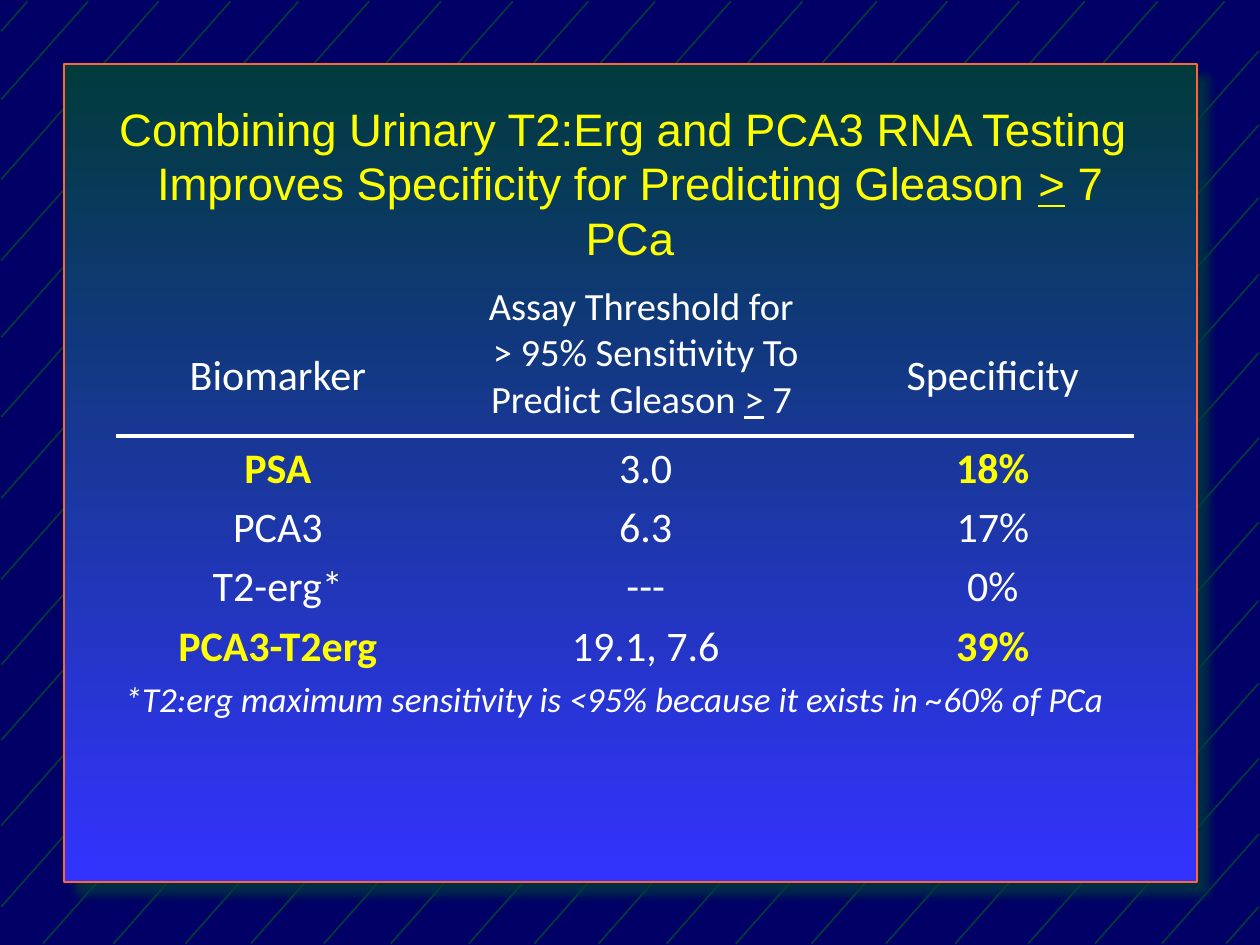
"""Build a slide comparing the specificity of urinary biomarkers."""
from dataclasses import dataclass

from lxml.etree import SubElement
from pptx import Presentation
from pptx.dml.color import RGBColor
from pptx.enum.shapes import MSO_CONNECTOR, MSO_SHAPE
from pptx.enum.text import MSO_ANCHOR, MSO_AUTO_SIZE, PP_ALIGN
from pptx.oxml import parse_xml
from pptx.oxml.ns import nsdecls, qn
from pptx.util import Inches, Pt


@dataclass(frozen=True)
class Theme:
    background: str = "000066"
    teal: str = "003B3B"
    blue: str = "3333FF"
    orange: str = "FF6633"
    text: str = "FFFFFF"
    accent: str = "FFFF00"
    heading_font: str = "Arial"
    body_font: str = "Calibri"
    title_size: int = 26
    body_size: int = 24
    threshold_size: int = 22
    note_size: int = 20


THEME = Theme()
TITLE = [
    "Combining Urinary T2:Erg and PCA3 RNA Testing ",
    "\v",
    "Improves Specificity for Predicting Gleason ",
    ">",
    " 7 PCa",
]
HEADERS = ["Biomarker", "Specificity"]
THRESHOLD = [
    ["Assay Threshold for "],
    ["> 95% Sensitivity To Predict Gleason ", ">", " 7 "],
]
ROWS = [
    ("PSA", "3.0", "18%"),
    ("PCA3", "6.3", "17%"),
    ("T2-erg*", "---", "0%"),
    ("PCA3-T2erg", "19.1, 7.6", "39%"),
]
HIGHLIGHTED = {"PSA", "PCA3-T2erg"}
NOTE = "*T2:erg maximum sensitivity is <95% because it exists in ~60% of PCa"
COLUMN_WIDTHS = [2.57, 3.27, 2.24]
ROW_HEIGHTS = [1.21, 0.47, 0.47, 0.47, 0.47, 0.49]
STRIPE_STARTS = [
    0.22, 0.7, 1.26, 1.83, 2.37, 2.93, 3.5, 4.07, 4.67, 5.2,
    5.8, 6.37, 6.96, 7.52, 8.09, 8.61, 9.19, 9.72, 10.34, 10.86,
    11.37, 11.91, 12.46, 13.06, 13.65, 14.2, 14.78, 15.31, 15.84, 16.35,
]
STRIPE_SLOPE = 1.13
EDGE, RIGHT, BOTTOM = 0.01, 9.99, 7.49
NO_STYLE = "{2D5ABB26-0587-4C30-8999-92F81FD0307C}"


def color(value):
    return RGBColor.from_string(value)


def add_run(paragraph, text, size, fill, font, bold=False, italic=False):
    run = paragraph.add_run()
    run.text = text
    run.font.size, run.font.name = Pt(size), font
    run.font.bold, run.font.italic = bold, italic
    run.font.underline = text == ">"
    run.font.color.rgb = color(fill)


def add_effects(shape, content=""):
    effects = f'<a:effectLst {nsdecls("a")}>{content}</a:effectLst>'
    shape._element.spPr.append(parse_xml(effects))


def add_stripes(slide):
    for start in STRIPE_STARTS:
        left_x = max(EDGE, start - (BOTTOM - EDGE) / STRIPE_SLOPE)
        right_x = min(start, RIGHT)
        left_y, right_y = (EDGE + (start - x) * STRIPE_SLOPE for x in (left_x, right_x))
        points = [Inches(value) for value in (right_x, right_y, left_x, left_y)]
        stripe = slide.shapes.add_connector(MSO_CONNECTOR.STRAIGHT, *points)
        stripe.line.color.rgb = color(THEME.teal)
        stripe.line.width = Pt(1)
        add_effects(stripe)


def add_panel(slide):
    panel = slide.shapes.add_shape(
        MSO_SHAPE.RECTANGLE, Inches(0.51), Inches(0.51), Inches(8.99), Inches(6.49)
    )
    panel.fill.gradient()
    panel.fill.gradient_angle = 270
    for stop, position, value in zip(
        panel.fill.gradient_stops, (0, 1), (THEME.teal, THEME.blue)
    ):
        stop.position = position
        stop.color.rgb = color(value)
    panel.line.color.rgb = color(THEME.orange)
    panel.line.width = Pt(1)
    add_effects(
        panel,
        f'<a:outerShdw blurRad="{Pt(5)}" dist="{Pt(9.9)}" dir="2700000">'
        f'<a:srgbClr val="{THEME.teal}"><a:alpha val="75000"/></a:srgbClr></a:outerShdw>',
    )


def set_title(slide):
    title = slide.shapes.title
    title.left, title.top = Inches(0.75), Inches(0.75)
    title.width, title.height = Inches(8.5), Inches(1.08)
    frame = title.text_frame
    frame.word_wrap, frame.auto_size = True, MSO_AUTO_SIZE.NONE
    frame.vertical_anchor = MSO_ANCHOR.TOP
    paragraph = frame.paragraphs[0]
    paragraph.alignment = PP_ALIGN.CENTER
    for text in TITLE:
        if text == "\v":
            line_break = paragraph._p.add_br()
            SubElement(line_break, qn("a:rPr"), sz=str(THEME.title_size * 100))
        else:
            add_run(paragraph, text, THEME.title_size, THEME.accent, THEME.heading_font)
    slide.shapes._spTree.append(title._element)


def write_cell(cell, text, size=THEME.body_size, align=PP_ALIGN.CENTER, **style):
    paragraph = cell.text_frame.paragraphs[0]
    paragraph.alignment, paragraph.line_spacing = align, 1.15
    highlighted = style.pop("highlighted", False)
    fill = THEME.accent if highlighted else THEME.text
    add_run(paragraph, text, size, fill, THEME.body_font, bold=highlighted, **style)


def write_threshold(cell):
    frame = cell.text_frame
    for index, texts in enumerate(THRESHOLD):
        paragraph = frame.add_paragraph() if index else frame.paragraphs[0]
        paragraph.alignment = PP_ALIGN.CENTER
        for text in texts:
            add_run(paragraph, text, THEME.threshold_size, THEME.text, THEME.body_font)


def add_bottom_border(cell):
    border = parse_xml(
        f'<a:lnB {nsdecls("a")} w="{Pt(3)}"><a:solidFill>'
        f'<a:srgbClr val="{THEME.text}"/></a:solidFill></a:lnB>'
    )
    cell._tc.get_or_add_tcPr().insert(0, border)


def add_biomarker_table(slide):
    table = slide.shapes.add_table(
        len(ROW_HEIGHTS), len(COLUMN_WIDTHS), Inches(0.92), Inches(2.25),
        Inches(sum(COLUMN_WIDTHS)), Inches(sum(ROW_HEIGHTS)),
    ).table
    table.first_row = table.horz_banding = False
    table._tbl.tblPr.find(qn("a:tableStyleId")).text = NO_STYLE
    for column, width in zip(table.columns, COLUMN_WIDTHS):
        column.width = Inches(width)
    for row, height in zip(table.rows, ROW_HEIGHTS):
        row.height = Inches(height)
    for cell in table.iter_cells():
        cell.fill.background()
        cell.margin_left = cell.margin_right = Inches(0.07)
        cell.margin_top = cell.margin_bottom = 0

    for column, text in zip((0, 2), HEADERS):
        table.cell(0, column).margin_top = Inches(0.47)
        write_cell(table.cell(0, column), text)
    write_threshold(table.cell(0, 1))
    for cell in table.rows[0].cells:
        add_bottom_border(cell)

    for row, values in enumerate(ROWS, start=1):
        for column, text in enumerate(values):
            highlighted = values[0] in HIGHLIGHTED and column != 1
            write_cell(table.cell(row, column), text, highlighted=highlighted)

    note = table.cell(len(ROWS) + 1, 0)
    note.merge(table.cell(len(ROWS) + 1, 2))
    write_cell(note, NOTE, THEME.note_size, PP_ALIGN.LEFT, italic=True)


def main():
    presentation = Presentation()
    presentation.slide_width, presentation.slide_height = Inches(10), Inches(7.5)
    slide = presentation.slides.add_slide(presentation.slide_layouts[5])
    slide.background.fill.solid()
    slide.background.fill.fore_color.rgb = color(THEME.background)
    add_stripes(slide)
    add_panel(slide)
    add_biomarker_table(slide)
    set_title(slide)
    presentation.save("out.pptx")


if __name__ == "__main__":
    main()
